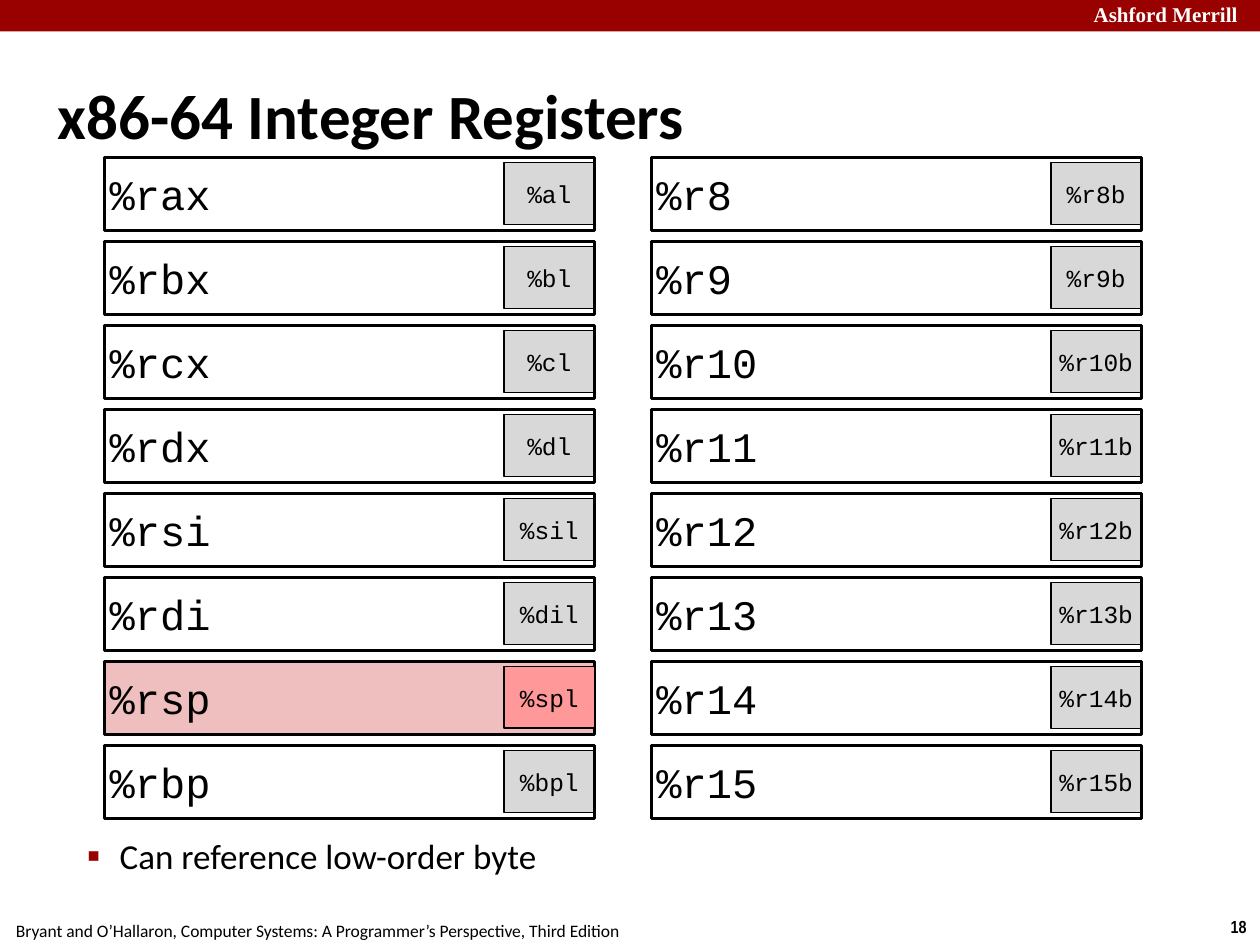
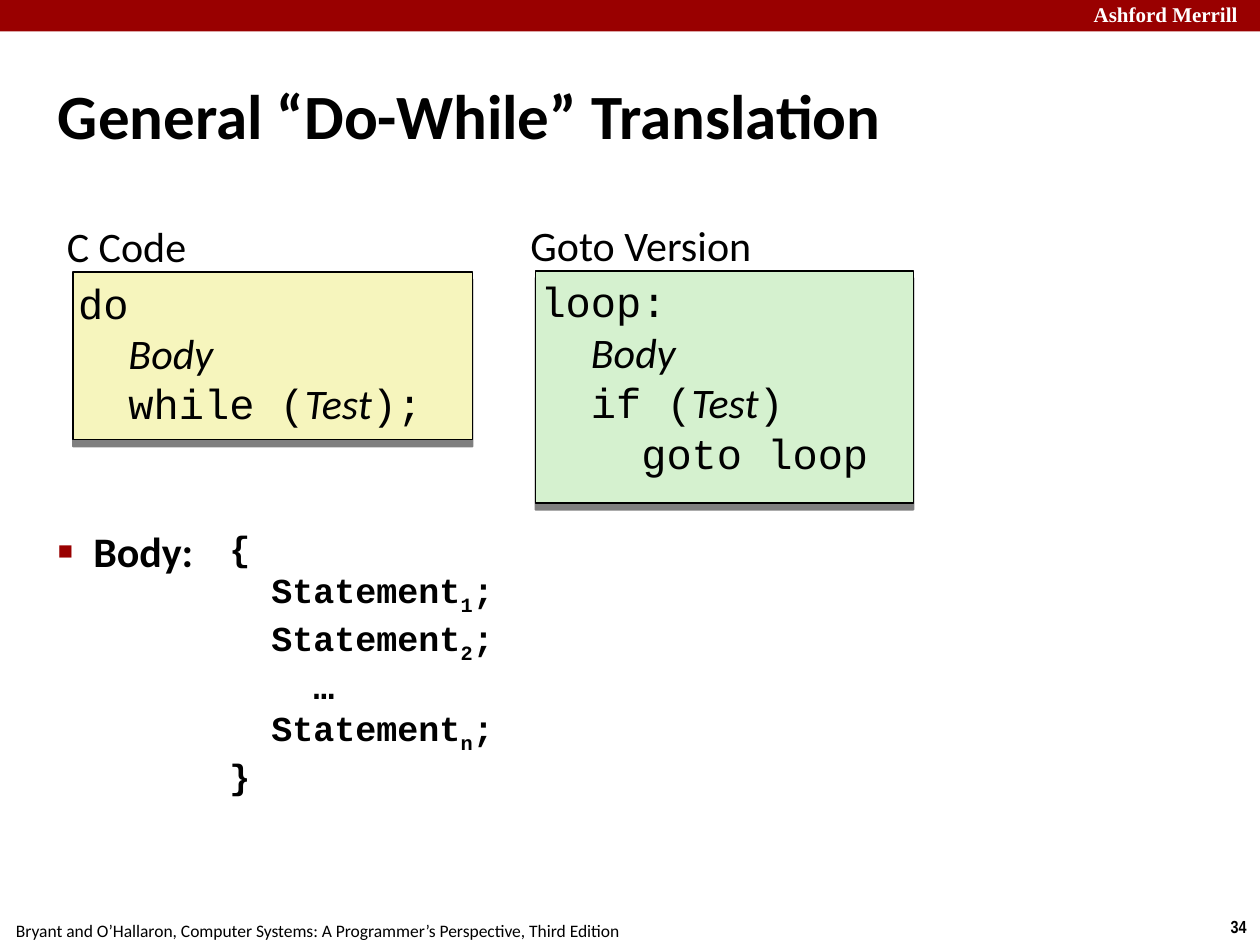
from lxml import etree
from pptx import Presentation
from pptx import util as u
from pptx.dml.color import RGBColor
from pptx.enum import shapes, text
from pptx.oxml import ns

COLORS = {
    "black": "000000",
    "white": "FFFFFF",
    "band": "990000",
    "byte": "D8D8D8",
    "stack_register": "EFBFBF",
    "stack_byte": "FF9999",
    "c_code": "F6F5BD",
    "goto_code": "D5F1CF",
}
SANS, MONO, SERIF, NARROW = "Calibri", "Courier New", "Times New Roman", "Arial Narrow"
LEFT, CENTER = text.PP_ALIGN.LEFT, text.PP_ALIGN.CENTER
TOP, MIDDLE = text.MSO_ANCHOR.TOP, text.MSO_ANCHOR.MIDDLE
FOOTER = "Bryant and O’Hallaron, Computer Systems: A Programmer’s Perspective, Third Edition"

REGISTER_COLUMNS = [
    (0.83, [("%rax", "%al"), ("%rbx", "%bl"), ("%rcx", "%cl"), ("%rdx", "%dl"),
            ("%rsi", "%sil"), ("%rdi", "%dil"), ("%rsp", "%spl"), ("%rbp", "%bpl")]),
    (5.17, [(f"%r{n}", f"%r{n}b") for n in range(8, 16)]),
]
STACK_POINTER = "%rsp"
REGISTER_TOP, REGISTER_PITCH = 1.25, 2 / 3
REGISTER_WIDTH, REGISTER_HEIGHT = 3.89, 0.58
BYTE_WIDTH, BYTE_HEIGHT, BYTE_DROP = 0.72, 0.49, 0.04

VARIABLE = {"font": SANS, "italic": True}
C_LINES = [
    (0, ["do"]),
    (2, [("Body", VARIABLE)]),
    (2, ["while (", ("Test", VARIABLE), ");"]),
]
GOTO_LINES = [
    (0, ["loop:"]),
    (2, [("Body", VARIABLE)]),
    (2, ["if (", ("Test", VARIABLE), ")"]),
    (4, ["goto loop"]),
]


def color(name):
    return RGBColor.from_string(COLORS[name])


def place(box, at):
    box.left, box.top, box.width, box.height = map(u.Inches, at)


def prepare_frame(box, anchor=TOP, inset=(0.04, 0.04), wrap=True):
    frame = box.text_frame
    frame.auto_size = text.MSO_AUTO_SIZE.NONE
    frame.word_wrap = wrap
    frame.vertical_anchor = anchor
    frame.margin_left = frame.margin_right = u.Inches(inset[0])
    frame.margin_top = frame.margin_bottom = u.Inches(inset[1])
    return frame


def add_span(para, words, *, size=24, font=SANS, ink="black", bold=False,
             italic=False, subscript=False):
    span = para.add_run()
    span.text = words
    span.font.size = u.Pt(size)
    span.font.name = font
    span.font.color.rgb = color(ink)
    span.font.bold = bold
    span.font.italic = italic
    if subscript:
        span.font._element.set("baseline", "-25000")


def format_para(para, align=LEFT, margin=0, hanging=0, before=0):
    para.alignment = align
    para.space_before = u.Pt(before)
    props = para._p.get_or_add_pPr()
    props.set("marL", str(u.Inches(margin)))
    props.set("indent", str(-u.Inches(hanging)))


def set_bullet(para, symbol, percent):
    props = para._p.get_or_add_pPr()
    tint = etree.SubElement(props, ns.qn("a:buClr"))
    etree.SubElement(tint, ns.qn("a:srgbClr"), val=COLORS["band"])
    etree.SubElement(props, ns.qn("a:buSzPct"), val=str(percent * 1000))
    etree.SubElement(props, ns.qn("a:buChar"), char=symbol)


def write_lines(frame, lines, **style):
    """Write (indent in characters, spans) lines of fixed-width code."""
    character_width = 0.6 * style["size"] / 72
    for number, (indent, spans) in enumerate(lines):
        para = frame.add_paragraph() if number else frame.paragraphs[0]
        format_para(para, margin=indent * character_width)
        for span in spans:
            words, changes = (span, {}) if isinstance(span, str) else span
            add_span(para, words, **{"font": MONO, **style, **changes})


def add_label(page, at, words, *, align=LEFT, inset=(0.04, 0.04), wrap=True,
              hanging=0, before=0, **style):
    box = page.shapes.add_textbox(*map(u.Inches, at))
    para = prepare_frame(box, inset=inset, wrap=wrap).paragraphs[0]
    format_para(para, align, hanging, hanging, before)
    add_span(para, words, **style)


def add_box(page, at, fill=None, line=None):
    box = page.shapes.add_shape(shapes.MSO_SHAPE.RECTANGLE, *map(u.Inches, at))
    box.shadow.inherit = False
    if fill:
        box.fill.solid()
        box.fill.fore_color.rgb = color(fill)
    else:
        box.fill.background()
    if line:
        box.line.color.rgb = color("black")
        box.line.width = u.Pt(line)
    else:
        box.line.fill.background()
    return box


def add_named_box(page, at, name, size, fill, line, align=LEFT):
    box = add_box(page, at, fill, line)
    para = prepare_frame(box, MIDDLE).paragraphs[0]
    format_para(para, align)
    add_span(para, name, size=size, font=MONO)


def add_drop_shadow(box):
    effects = box._element.spPr.find(ns.qn("a:effectLst"))
    shadow = etree.SubElement(effects, ns.qn("a:outerShdw"), blurRad="0",
                              dist=str(u.Pt(4)), dir="5400000", rotWithShape="0")
    tint = etree.SubElement(shadow, ns.qn("a:srgbClr"), val=COLORS["black"])
    etree.SubElement(tint, ns.qn("a:alpha"), val="50000")


def add_code(page, at, fill, lines):
    box = add_box(page, at, fill, 1)
    add_drop_shadow(box)
    write_lines(prepare_frame(box), lines, size=24)


def add_page(deck, title, number):
    """Add a page with the band, footer, page number and title."""
    page = deck.slides.add_slide(deck.slide_layouts[1])
    add_label(page, (9.66, 7.22, 0.34, 0.27), number, align=CENTER, inset=(0.1, 0.05),
              wrap=False, size=10, font=NARROW, bold=True)
    add_label(page, (-0.02, 7.25, 5.08, 0.27), FOOTER, align=CENTER, inset=(0.1, 0.05),
              wrap=False, size=10)
    add_box(page, (0, 0, 10, 0.25), "band")
    add_label(page, (8.64, -0.03, 1.44, 0.28), "Ashford Merrill",
              size=12, font=SERIF, ink="white", bold=True)
    heading = page.shapes.title
    place(heading, (0.42, 0.28, 9.17, 1.25))
    para = prepare_frame(heading, MIDDLE).paragraphs[0]
    format_para(para, margin=0.13, hanging=0.13)
    add_span(para, title, size=36, bold=True)
    return page


def fill_body(page, at, words, *, symbol, percent, level=0, margin, hanging, before, **style):
    body = page.placeholders[1]
    place(body, at)
    para = prepare_frame(body).paragraphs[0]
    para.level = level
    format_para(para, LEFT, margin, hanging, before)
    set_bullet(para, symbol, percent)
    add_span(para, words, **style)


def add_register(page, left, row, name, byte_name):
    top = REGISTER_TOP + row * REGISTER_PITCH
    register_at = (left, top, REGISTER_WIDTH, REGISTER_HEIGHT)
    byte_at = (left + REGISTER_WIDTH - BYTE_WIDTH, top + BYTE_DROP, BYTE_WIDTH, BYTE_HEIGHT)
    is_stack = name == STACK_POINTER
    register = (register_at, name, 24, "stack_register" if is_stack else None, 2)
    low_byte = (byte_at, byte_name, 14, "stack_byte" if is_stack else "byte",
                1 if is_stack else 0.75, CENTER)
    # The filled register must lie behind its byte; the others frame theirs.
    for part in (register, low_byte) if is_stack else (low_byte, register):
        add_named_box(page, *part)


def build_registers(deck):
    page = add_page(deck, "x86-64 Integer Registers", "18")
    fill_body(page, (0.35, 6.58, 8.02, 0.92), "Can reference low-order byte",
              symbol="▪", percent=110, level=1, margin=0.56, hanging=0.26, before=5, size=20)
    for left, registers in REGISTER_COLUMNS:
        for row, (name, byte_name) in enumerate(registers):
            add_register(page, left, row, name, byte_name)


def build_do_while(deck):
    page = add_page(deck, "General “Do-While” Translation", "34")
    add_label(page, (0.49, 1.71, 2.86, 0.49), "C Code", hanging=0.2, before=8.6)
    add_code(page, (0.58, 2.16, 3.17, 1.33), "c_code", C_LINES)
    add_label(page, (4.17, 1.7, 2.53, 0.49), "Goto Version", hanging=0.2, before=8.6)
    add_code(page, (4.25, 2.15, 3, 1.84), "goto_code", GOTO_LINES)
    fill_body(page, (0.42, 4.13, 9.17, 2.72), "Body:", symbol="■", percent=60,
              margin=0.28, hanging=0.28, before=6, bold=True)
    first, second, last = [
        (2, ["Statement", (index, {"subscript": True}), ";"]) for index in "12n"]
    statements = page.shapes.add_textbox(*map(u.Inches, (1.78, 4.14, 2.43, 2.47)))
    write_lines(prepare_frame(statements),
                [(0, ["{"]), first, second, (4, ["…"]), last, (0, ["}"])],
                size=20, bold=True)


def main():
    deck = Presentation()
    deck.slide_width, deck.slide_height = u.Inches(10), u.Inches(7.5)
    build_registers(deck)
    build_do_while(deck)
    deck.save("out.pptx")


if __name__ == "__main__":
    main()
